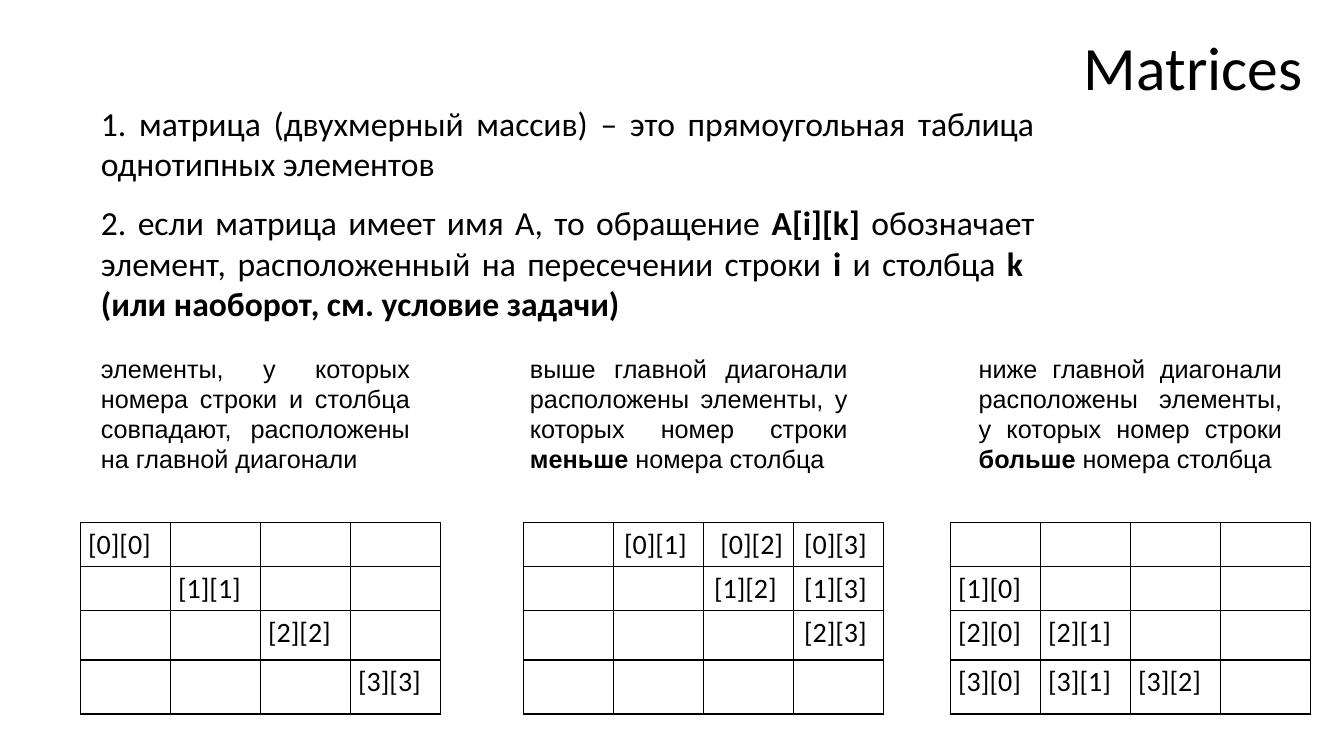
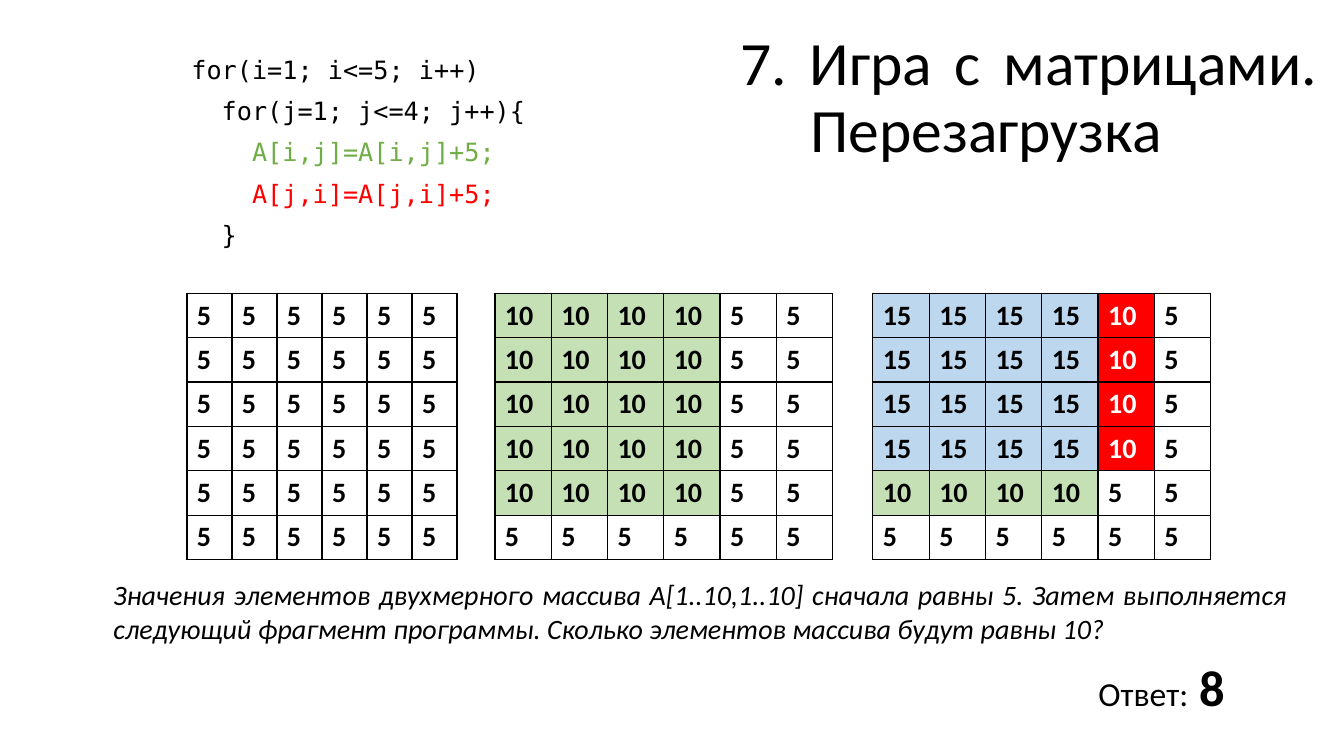
from lxml import etree
from pptx import Presentation
from pptx.dml.color import RGBColor
from pptx.enum.text import MSO_ANCHOR, MSO_AUTO_SIZE, PP_ALIGN
from pptx.oxml.ns import qn
from pptx.util import Pt

BLACK, WHITE, RED = "000000", "FFFFFF", "FF0000"
GREEN, PALE_GREEN, PALE_BLUE = "70AD47", "C5E0B4", "BDD7EE"
SANS, ARIAL, MONO = "Calibri", "Arial", "DejaVu Sans Mono"
LEFT, CENTER, JUSTIFY = PP_ALIGN.LEFT, PP_ALIGN.CENTER, PP_ALIGN.JUSTIFY
BOLD = {"bold": True}

# Boxes are left, top, width, height in points.
DEFINITIONS = [
    ((65, 70, 681, 65.5),
     ["1. матрица (двухмерный массив) – это прямоугольная таблица однотипных элементов"]),
    ((65, 141, 681, 94.5),
     ["2. если матрица имеет имя A, то обращение ", ("A[i][k]", BOLD),
      " обозначает элемент, расположенный на пересечении строки ", ("i", BOLD),
      " и столбца ", ("k \n(или наоборот, см. условие задачи)", BOLD)]),
]
DIAGONALS = [
    {"caption": ["элементы, у которых номера строки и столбца совпадают, "
                 "расположены на главной диагонали"],
     "caption_left": 65, "caption_width": 235, "grid_left": 57.5, "align": LEFT,
     "grid": [["[0][0]", "", "", ""],
              ["", "[1][1]", "", ""],
              ["", "", "[2][2]", ""],
              ["", "", "", "[3][3]"]]},
    {"caption": ["выше главной диагонали расположены элементы, у которых номер строки ",
                 ("меньше", BOLD), " номера столбца"],
     "caption_left": 371.5, "caption_width": 241, "grid_left": 374, "align": CENTER,
     "grid": [["", "[0][1]\u00a0", "\u00a0[0][2]", "[0][3]\u00a0"],
              ["", "", "[1][2]\u00a0", "[1][3]\u00a0"],
              ["", "", "", "[2][3]\u00a0"],
              ["", "", "", ""]]},
    {"caption": ["ниже главной диагонали расположены элементы, у которых номер строки ",
                 ("больше ", BOLD), "номера столбца"],
     "caption_left": 692, "caption_width": 231, "grid_left": 679, "align": LEFT,
     "grid": [["", "", "", ""],
              ["[1][0]", "", "", ""],
              ["[2][0]", "[2][1]", "", ""],
              ["[3][0]", "[3][1]", "[3][2]", ""]]},
]
CODE = [
    (0, "for(i=1; i<=5; i++)", BLACK),
    (1, "for(j=1; j<=4; j++){", BLACK),
    (2, "A[i,j]=A[i,j]+5;", GREEN),
    (2, "A[j,i]=A[j,i]+5;", RED),
    (1, "}", BLACK),
]
# Left edge, column width, and how many of the two code lines have run.
STAGES = [(133.5, 32.15, 0), (353.5, 40.2, 1), (623.5, 40.2, 2)]
CELL_COLOURS = {(False, False): (None, BLACK), (True, False): (PALE_GREEN, BLACK),
                (False, True): (RED, WHITE), (True, True): (PALE_BLUE, BLACK)}
QUESTION = ("Значения элементов двухмерного массива A[1..10,1..10] сначала равны 5. "
            "Затем выполняется следующий фрагмент программы. "
            "Сколько элементов массива будут равны 10?")


def rgb(colour):
    """Turn a hex string into a colour."""
    return RGBColor.from_string(colour)


def write(paragraph, runs, size=24, font=SANS, colour=BLACK, bold=False, italic=False,
          align=LEFT, spacing=None, before=0, margin=0, hanging=0, tab=None):
    """Fill a paragraph with runs, each a string or a (string, changes) pair."""
    paragraph.alignment = align
    paragraph.space_before = Pt(before)
    if spacing:
        paragraph.line_spacing = spacing
    properties = paragraph._p.get_or_add_pPr()
    properties.set("marL", str(Pt(margin)))
    properties.set("indent", str(Pt(-hanging)))
    etree.SubElement(properties, qn("a:buNone"))
    if tab:
        stops = etree.SubElement(properties, qn("a:tabLst"))
        etree.SubElement(stops, qn("a:tab"), pos=str(Pt(tab)), algn="l")
    for item in runs:
        words, changes = (item, {}) if isinstance(item, str) else item
        for number, line in enumerate(words.split("\n")):
            if number:
                paragraph.add_line_break()
            run = paragraph.add_run()
            run.text = line
            run.font.name = font
            run.font.size = Pt(changes.get("size", size))
            run.font.bold = changes.get("bold", bold)
            run.font.italic = italic
            run.font.color.rgb = rgb(colour)


def place(placeholder, box):
    """Move a placeholder to a box and return its text frame."""
    placeholder.left, placeholder.top, placeholder.width, placeholder.height = map(Pt, box)
    frame = placeholder.text_frame
    frame.word_wrap = True
    frame.auto_size = MSO_AUTO_SIZE.NONE
    return frame


def add_title(slide, words, box, **style):
    """Write the slide title in the shared title style."""
    frame = place(slide.shapes.title, box)
    frame.vertical_anchor = MSO_ANCHOR.MIDDLE
    write(frame.paragraphs[0], [words], size=44, spacing=0.9, **style)


def add_text(slide, box, runs, **style):
    """Add a wrapping text box with one paragraph."""
    frame = slide.shapes.add_textbox(*map(Pt, box)).text_frame
    frame.word_wrap = True
    frame.auto_size = MSO_AUTO_SIZE.SHAPE_TO_FIT_TEXT
    write(frame.paragraphs[0], runs, **style)


def add_borders(cell):
    """Draw a one-point black line on each side of a cell."""
    properties = cell._tc.get_or_add_tcPr()
    for position, side in enumerate(("lnL", "lnR", "lnT", "lnB")):
        line = etree.Element(qn("a:" + side), w=str(Pt(1)))
        fill = etree.SubElement(line, qn("a:solidFill"))
        etree.SubElement(fill, qn("a:srgbClr"), val=BLACK)
        properties.insert(position, line)


def add_grid(slide, left, top, column_width, heights, cells, insets, **style):
    """Add a bordered table; each cell is (words, fill, text colour)."""
    columns = len(cells[0])
    table = slide.shapes.add_table(len(cells), columns, Pt(left), Pt(top),
                                   Pt(column_width * columns), Pt(sum(heights))).table
    table.first_row = table.horz_banding = False
    for column in table.columns:
        column.width = Pt(column_width)
    for row, height, contents in zip(table.rows, heights, cells):
        row.height = Pt(height)
        for cell, (words, fill, colour) in zip(row.cells, contents):
            side, end = map(Pt, insets)
            cell.margin_left = cell.margin_right = side
            cell.margin_top = cell.margin_bottom = end
            if fill:
                cell.fill.solid()
                cell.fill.fore_color.rgb = rgb(fill)
            else:
                cell.fill.background()
            add_borders(cell)
            if words:
                write(cell.text_frame.paragraphs[0], [words], size=20, colour=colour, **style)


def stage_cell(row, column, passes):
    """Give the value and colours of an array element after some passes."""
    green = passes > 0 and row < 5 and column < 4
    red = passes > 1 and row < 4 and column < 5
    return (str(5 + 5 * green + 5 * red), *CELL_COLOURS[green, red])


def build_definitions(deck):
    """Build the slide that defines matrices and their diagonals."""
    slide = deck.slides.add_slide(deck.slide_layouts[5])
    add_title(slide, "Matrices", (767, -2, 175, 104.5))
    for box, runs in DEFINITIONS:
        add_text(slide, box, runs, align=JUSTIFY)
    for part in DIAGONALS:
        caption_box = (part["caption_left"], 248.5, part["caption_width"], 94.5)
        add_text(slide, caption_box, part["caption"], size=18, font=ARIAL, align=JUSTIFY)
        cells = [[(words, None, BLACK) for words in row] for row in part["grid"]]
        add_grid(slide, part["grid_left"], 373, 64.3, (31.5, 31.5, 35.5, 38.5), cells,
                 (5.4, 0), spacing=1.15, align=part["align"])


def build_exercise(deck):
    """Build the slide that runs the code on a matrix."""
    slide = deck.slides.add_slide(deck.slide_layouts[1])
    add_title(slide, "7. Игра с матрицами.\nПерезагрузка", (521.5, 18.5, 427.5, 104.5),
              align=JUSTIFY, margin=50, hanging=50)
    listing = place(slide.placeholders[1], (129.5, 37.5, 278, 150.5))
    for number, (level, line, colour) in enumerate(CODE):
        paragraph = listing.add_paragraph() if number else listing.paragraphs[0]
        write(paragraph, [line], size=18, font=MONO, colour=colour, spacing=0.9,
              before=10, margin=21.67 * level)
    add_text(slide, (74, 409, 853, 55.5), [QUESTION], size=20, italic=True, align=JUSTIFY)
    for left, column_width, passes in STAGES:
        cells = [[stage_cell(row, column, passes) for column in range(6)] for row in range(6)]
        add_grid(slide, left, 209.5, column_width, [31.7] * 6, cells, (7.2, 3.6), bold=True)
    add_text(slide, (777.5, 465, 182, 51), ["Ответ:\t", ("8", {"size": 36, "bold": True})],
             tab=108)


def main():
    """Build and save the deck."""
    deck = Presentation()
    deck.slide_width, deck.slide_height = Pt(960), Pt(540)
    build_definitions(deck)
    build_exercise(deck)
    deck.save("out.pptx")


main()
